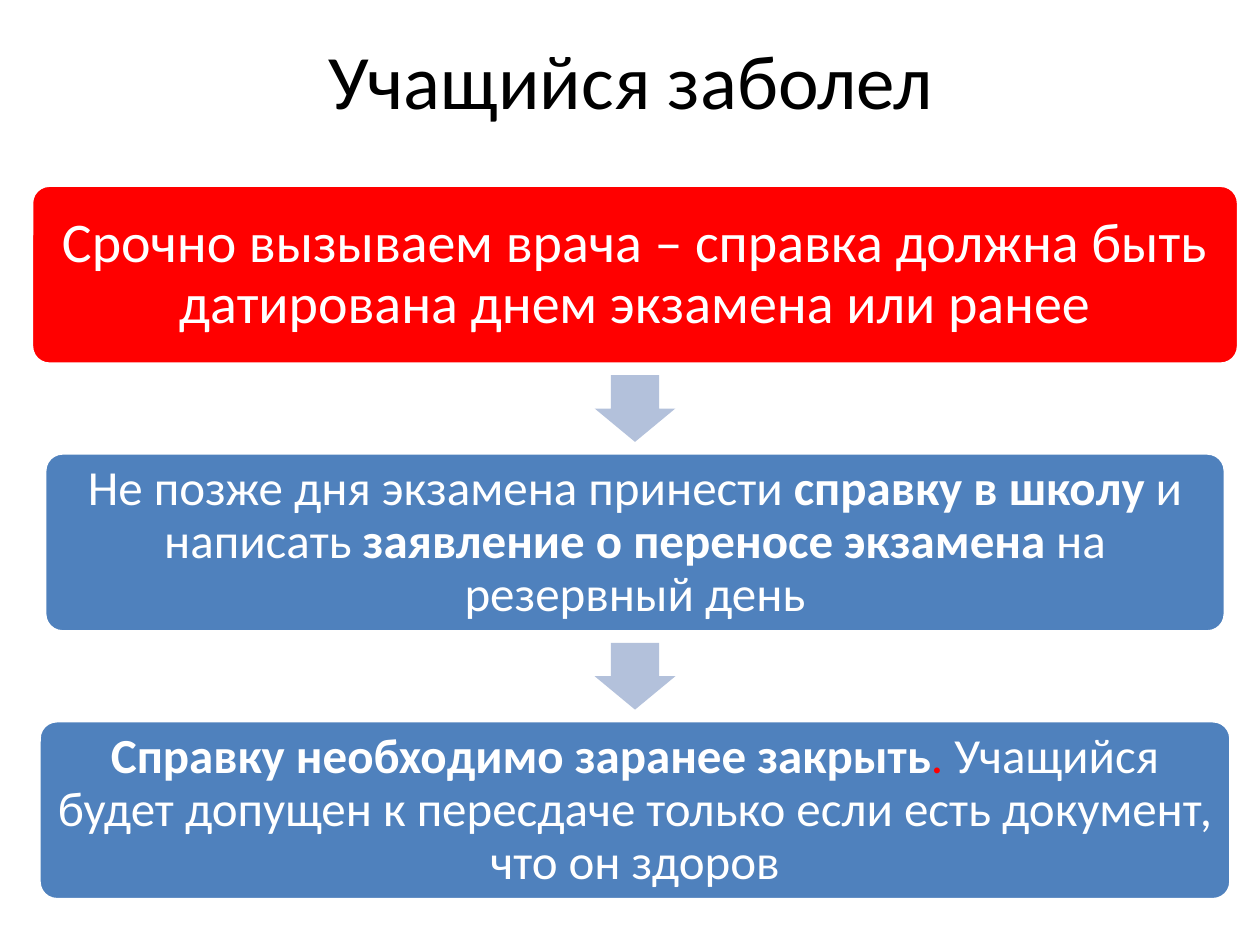
from dataclasses import dataclass

from pptx import Presentation
from pptx.dml.color import RGBColor
from pptx.enum.shapes import MSO_SHAPE
from pptx.enum.text import MSO_ANCHOR, PP_ALIGN
from pptx.util import Inches, Pt


@dataclass(frozen=True)
class Theme:
    font: str = "Calibri"
    title_size: int = 44
    lead_size: int = 32
    step_size: int = 28
    black: str = "000000"
    white: str = "FFFFFF"
    red: str = "FF0000"
    blue: str = "4F81BD"
    arrow: str = "B3C1DB"


THEME = Theme()

# Each step: width in inches, fill, text size, runs of (text, bold, colour)
STEPS = [
    (9.58, THEME.red, THEME.lead_size, [
        ("Срочно вызываем врача – справка должна быть датирована днем экзамена или ранее",
         False, THEME.white),
    ]),
    (9.37, THEME.blue, THEME.step_size, [
        ("Не позже дня экзамена принести ", False, THEME.white),
        ("справку в школу ", True, THEME.white),
        ("и написать ", False, THEME.white),
        ("заявление о переносе экзамена", True, THEME.white),
        (" на резервный день", False, THEME.white),
    ]),
    (9.46, THEME.blue, THEME.step_size, [
        ("Справку необходимо заранее закрыть", True, THEME.white),
        (". ", False, THEME.red),
        ("Учащийся будет допущен к пересдаче только если есть документ, что он здоров",
         False, THEME.white),
    ]),
]


def set_values(target, values):
    for name, value in values.items():
        setattr(target, name, value)


def write_runs(paragraph, runs, size):
    paragraph.alignment = PP_ALIGN.CENTER
    for text, bold, color in runs:
        run = paragraph.add_run()
        run.text = text
        set_values(run.font, {"name": THEME.font, "size": Pt(size), "bold": bold})
        run.font.color.rgb = RGBColor.from_string(color)


def add_filled_shape(slide, kind, box, fill, adjustments):
    shape = slide.shapes.add_shape(kind, *box)
    shape.shadow.inherit = False
    shape.fill.solid()
    shape.fill.fore_color.rgb = RGBColor.from_string(fill)
    shape.line.fill.background()
    for index, value in enumerate(adjustments):
        shape.adjustments[index] = value
    return shape


def place_title(slide, box, text):
    title = slide.shapes.title
    set_values(title, dict(zip(("left", "top", "width", "height"), box)))
    title.text_frame.vertical_anchor = MSO_ANCHOR.MIDDLE
    write_runs(title.text_frame.paragraphs[0], [(text, False, THEME.black)],
               THEME.title_size)


def add_step(slide, box, fill, size, runs):
    shape = add_filled_shape(slide, MSO_SHAPE.ROUNDED_RECTANGLE, box, fill, [0.1])
    shape.line.color.rgb = RGBColor.from_string(THEME.white)
    shape.line.width = Pt(2)
    margin = Inches(0.08)
    set_values(shape.text_frame, {
        "word_wrap": True, "vertical_anchor": MSO_ANCHOR.MIDDLE,
        "margin_left": margin, "margin_right": margin,
        "margin_top": margin, "margin_bottom": margin,
    })
    paragraph = shape.text_frame.paragraphs[0]
    paragraph.line_spacing = 0.9
    write_runs(paragraph, runs, size)


def add_process(slide, box, steps):
    """Stack centred steps down the box, with an arrow in every gap."""
    left, top, width, height = box
    center = left + width // 2
    step_height = Inches(1.42)
    arrow_width, arrow_height = Inches(0.64), Inches(0.53)
    pitch = (height - step_height) // (len(steps) - 1)
    gap = pitch - step_height
    for index, (step_width, fill, size, runs) in enumerate(steps):
        step_top = top + index * pitch
        if index:
            arrow_top = step_top - (gap + arrow_height) // 2
            add_filled_shape(
                slide, MSO_SHAPE.DOWN_ARROW,
                (center - arrow_width // 2, arrow_top, arrow_width, arrow_height),
                THEME.arrow, [0.6, 0.5])
        step_width = Inches(step_width)
        add_step(slide, (center - step_width // 2, step_top, step_width, step_height),
                 fill, size, runs)


def main():
    presentation = Presentation()
    presentation.slide_width = Inches(10)
    presentation.slide_height = Inches(7.5)
    title_only = presentation.slide_layouts[5]
    slide = presentation.slides.add_slide(title_only)

    # Heading
    place_title(slide, (Inches(0.51), Inches(0), Inches(9), Inches(1.25)),
                "Учащийся заболел")
    # Steps and arrows
    add_process(slide, (Inches(0.25), Inches(1.47), Inches(9.58), Inches(5.67)), STEPS)

    presentation.save("out.pptx")


if __name__ == "__main__":
    main()
